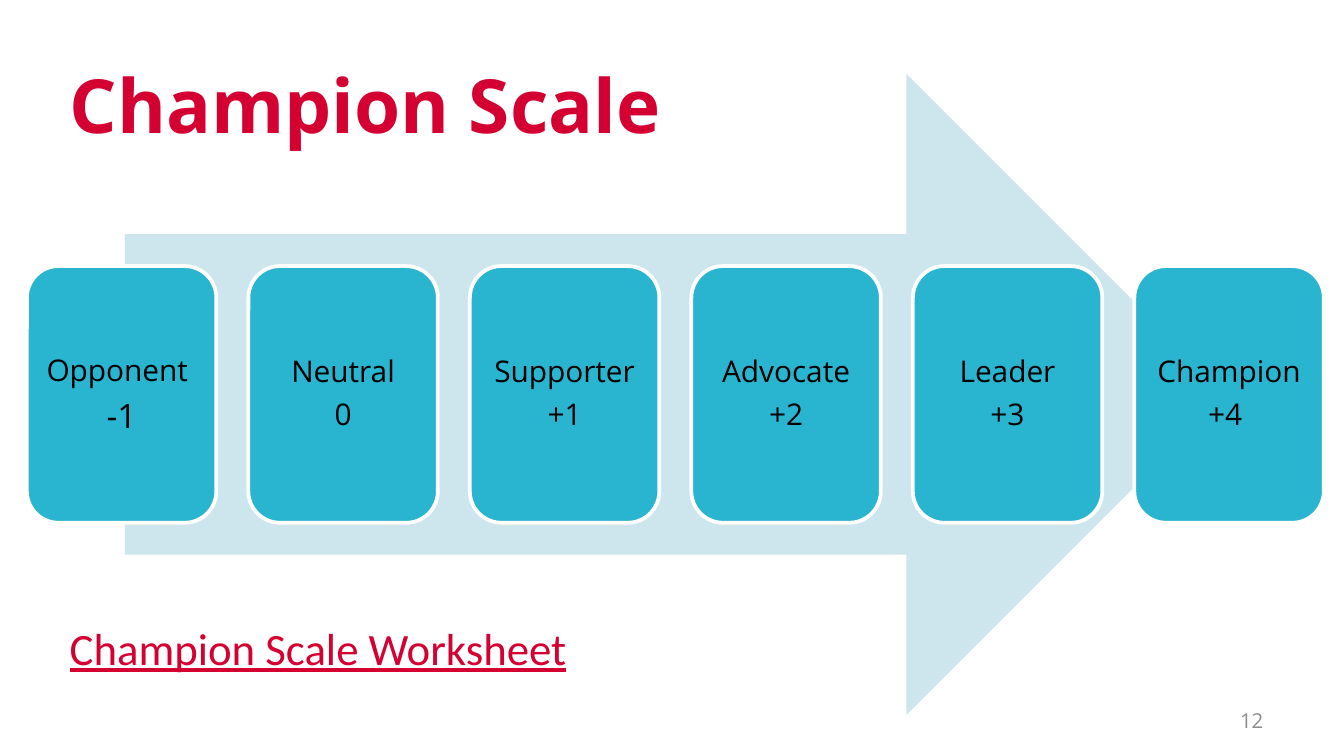
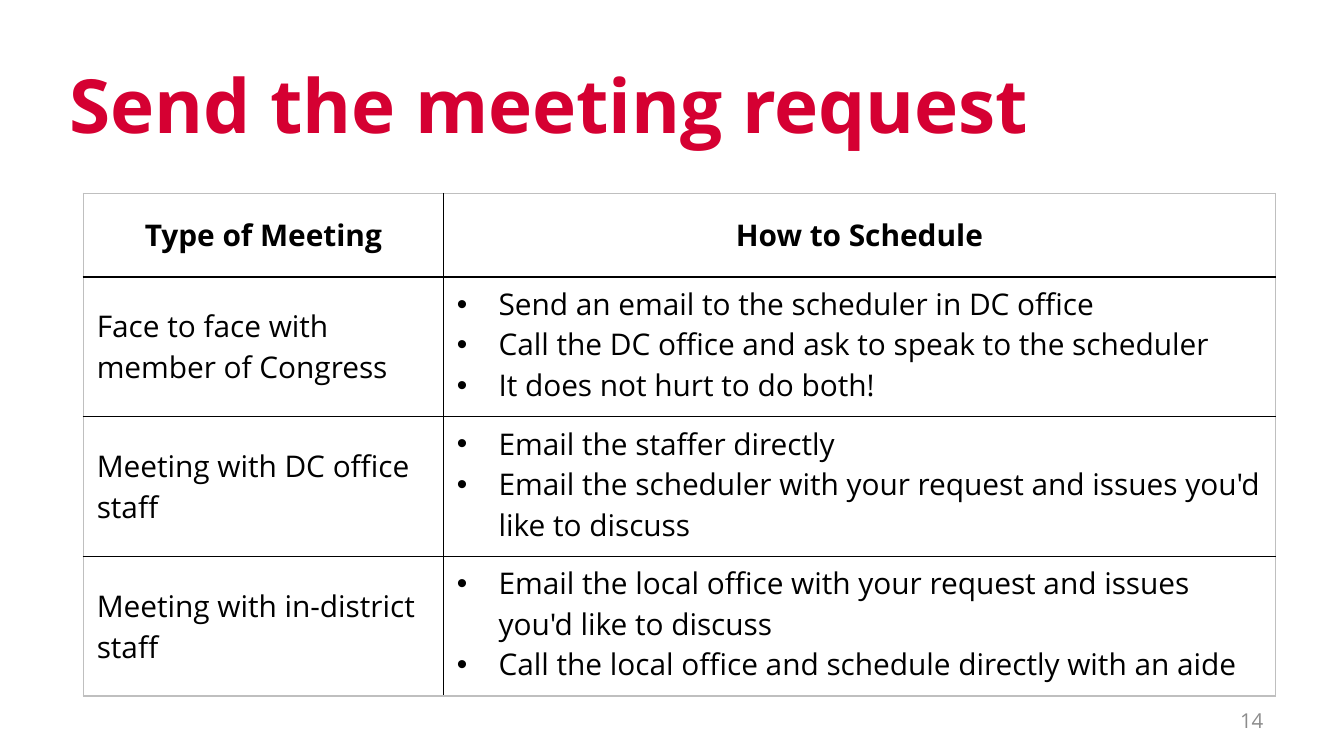
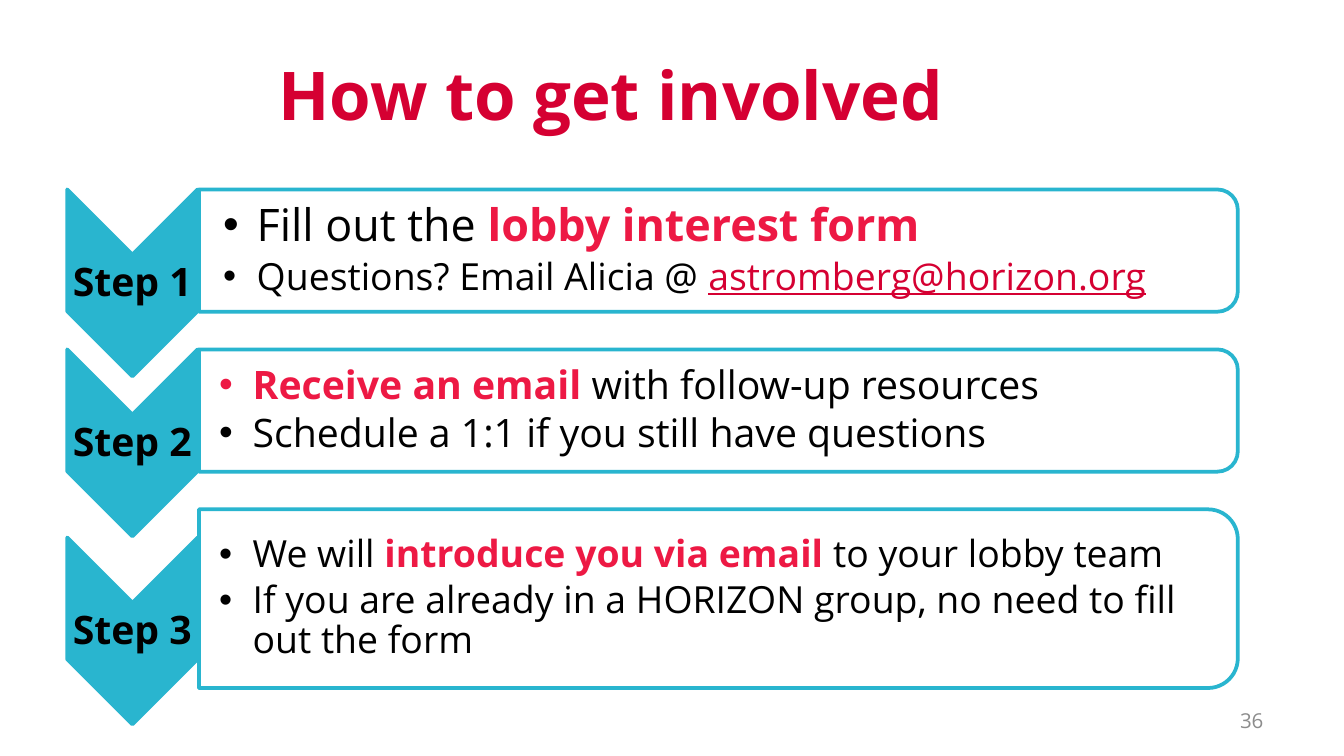
from dataclasses import dataclass
from typing import NamedTuple

from lxml.etree import SubElement
from pptx import Presentation
from pptx.dml.color import RGBColor
from pptx.enum.shapes import MSO_SHAPE
from pptx.enum.text import MSO_ANCHOR, PP_ALIGN
from pptx.oxml import parse_xml
from pptx.oxml.ns import nsdecls, qn
from pptx.util import Emu, Pt

SCALE = 9144
FONT = "Open Sans"
RED, ACCENT = "D50032", "ED1944"
TEAL, PALE = "29B5CF", "CDE5ED"
BLACK, WHITE, GRAY, RULE = "000000", "FFFFFF", "8C8C8C", "BFBFBF"


class Box(NamedTuple):
    left: float
    top: float
    width: int
    height: int


class Span(NamedTuple):
    text: str
    size: float
    color: str = BLACK
    bold: bool = False
    underline: bool = False


@dataclass
class Level:
    name: str
    score: str
    score_size: int = 16


@dataclass
class Step:
    panel_top: int
    panel_height: int
    chevron_top: int
    inset: int
    points: list[list[Span]]


@dataclass
class Meeting:
    kind: str
    actions: list[str]


LEVELS = [
    Level("Opponent", "-1", 18),
    Level("Neutral", "0"),
    Level("Supporter", "+1"),
    Level("Advocate", "+2"),
    Level("Leader", "+3"),
    Level("Champion", "+4 "),
]

MEETINGS = [
    Meeting("Face to face with member of Congress", [
        "Send an email to the scheduler in DC office",
        "Call the DC office and ask to speak to the scheduler",
        "It does not hurt to do both!",
    ]),
    Meeting("Meeting with DC office staff", [
        "Email the staffer directly",
        "Email the scheduler with your request and issues you'd like to discuss",
    ]),
    Meeting("Meeting with in-district staff", [
        "Email the local office with your request and issues you'd like to discuss",
        "Call the local office and schedule directly with an aide",
    ]),
]

STEPS = [
    Step(141, 91, 141, 19, [
        [Span("Fill out the ", 24), Span("lobby interest form", 24, ACCENT, True)],
        [Span("Questions? Email Alicia @ ", 20),
         Span("astromberg@horizon.org", 20, RED, underline=True)],
    ]),
    Step(260, 91, 260, 16, [
        [Span("Receive an email ", 21, ACCENT, True), Span("with follow-up resources", 21)],
        [Span("Schedule a 1:1 if you still have questions", 21)],
    ]),
    Step(379, 133, 400, 16, [
        [Span("We will ", 20), Span("introduce you via email ", 20, ACCENT, True),
         Span("to your lobby team", 20)],
        [Span("If you are already in a HORIZON group, no need to fill out the form", 20)],
    ]),
]


def px(n: float) -> Emu:
    return Emu(round(n * SCALE))


def rgb(value: str) -> RGBColor:
    return RGBColor.from_string(value)


def add_text(p, text: str, *, size: float, color: str = BLACK, bold: bool = False,
             underline: bool = False, font: str = FONT) -> None:
    r = p.add_run()
    r.text = text
    r.font.name = font
    r.font.size = Pt(size)
    r.font.bold = bold
    r.font.underline = underline
    r.font.color.rgb = rgb(color)


def add_paragraph(tf, *, align=PP_ALIGN.LEFT, spacing: float | None = None,
                  after: float = 0, bullet_indent: int = 0):
    first = tf.paragraphs[0]
    p = tf.add_paragraph() if first.runs else first
    p.alignment = align
    if bullet_indent:
        pPr = p._p.get_or_add_pPr()
        pPr.set("marL", str(px(bullet_indent)))
        pPr.set("indent", str(-px(bullet_indent)))
        SubElement(pPr, qn("a:buFont"), typeface="Arial")
        SubElement(pPr, qn("a:buChar"), char="•")
    if spacing:
        p.line_spacing = spacing
    if after:
        p.space_after = Pt(after)
    return p


def add_box(s, box: Box, *, anchor=MSO_ANCHOR.MIDDLE, insets=(10, 5, 10, 5)):
    tf = s.shapes.add_textbox(*map(px, box)).text_frame
    tf.word_wrap = True
    tf.vertical_anchor = anchor
    tf.margin_left, tf.margin_top, tf.margin_right, tf.margin_bottom = map(px, insets)
    return tf


def add_shape(s, kind, box: Box, fill: str, line: str | None = None):
    sp = s.shapes.add_shape(kind, *map(px, box))
    sp.shadow.inherit = False
    sp.fill.solid()
    sp.fill.fore_color.rgb = rgb(fill)
    if line:
        sp.line.color.rgb = rgb(line)
        sp.line.width = Pt(2)
    else:
        sp.line.fill.background()
    return sp


def add_turned(s, kind, box: Box, fill: str, line: str):
    shift = (box.width - box.height) / 2
    frame = Box(box.left + shift, box.top - shift, box.height, box.width)
    sp = add_shape(s, kind, frame, fill, line)
    sp.rotation = 90
    return sp


def add_slide(prs, title: str, number: int, *, box=Box(42, 30, 870, 94),
              size: int = 40, align=PP_ALIGN.LEFT):
    s = prs.slides.add_slide(prs.slide_layouts[6])
    add_text(add_paragraph(add_box(s, box), align=align), title,
             size=size, color=RED, bold=True)
    tf = add_box(s, Box(717, 521, 233, 30))
    add_text(add_paragraph(tf, align=PP_ALIGN.RIGHT), str(number), size=11, color=GRAY)
    return s


def add_level(s, level: Level, left: float) -> None:
    add_shape(s, MSO_SHAPE.ROUNDED_RECTANGLE, Box(left, 198, 141, 191), TEAL, WHITE)
    tf = add_box(s, Box(left + 7, 205, 127, 177), insets=(7, 7, 7, 7))
    for text, size in ((level.name, 16), (level.score, level.score_size)):
        p = add_paragraph(tf, align=PP_ALIGN.CENTER, spacing=0.9, after=0.35 * size)
        add_text(p, text, size=size)
        if text == level.name and level.score_size != size:
            add_text(p, " ", size=level.score_size)


def champion_scale(prs) -> None:
    s = add_slide(prs, "Champion Scale", 12)
    add_shape(s, MSO_SHAPE.RIGHT_ARROW, Box(93, 55, 820, 477), PALE)
    for i, level in enumerate(LEVELS):
        add_level(s, level, 20 + i * 164.8)
    tf = add_box(s, Box(42, 457, 435, 50), anchor=MSO_ANCHOR.TOP)
    add_text(add_paragraph(tf), "Champion Scale Worksheet", size=24, color=RED,
             underline=True, font="Calibri")


def style_cell(cell, edges: dict[str, str], anchor) -> None:
    cell.fill.solid()
    cell.fill.fore_color.rgb = rgb(WHITE)
    cell.vertical_anchor = anchor
    tcPr = cell._tc.get_or_add_tcPr()
    for i, (side, color) in enumerate(edges.items()):
        tcPr.insert(i, parse_xml(
            f'<a:ln{side} {nsdecls("a")} w="{Pt(1)}"><a:solidFill>'
            f'<a:srgbClr val="{color}"/></a:solidFill></a:ln{side}>'))


def meeting_request(prs) -> None:
    s = add_slide(prs, "Send the meeting request", 14)
    last = len(MEETINGS)
    tbl = s.shapes.add_table(last + 1, 2, *map(px, Box(62, 144, 887, 374))).table
    tbl.first_row = tbl.horz_banding = False
    for col, width in zip(tbl.columns, (268, 619)):
        col.width = px(width)
    for i, row in enumerate(tbl.rows):
        row.height = px(104 if i else 62)
        for j, cell in enumerate(row.cells):
            outer = {"L": j == 0, "R": j == 1, "T": i == 0, "B": i == last}
            edges = {side: RULE if out else BLACK for side, out in outer.items()}
            top = i > 0 and j == 1
            style_cell(cell, edges, MSO_ANCHOR.TOP if top else MSO_ANCHOR.MIDDLE)
    for j, heading in enumerate(("Type of Meeting", "How to Schedule")):
        p = add_paragraph(tbl.cell(0, j).text_frame, align=PP_ALIGN.CENTER)
        add_text(p, heading, size=16, bold=True)
    for i, meeting in enumerate(MEETINGS, 1):
        add_text(add_paragraph(tbl.cell(i, 0).text_frame), meeting.kind, size=16)
        for action in meeting.actions:
            p = add_paragraph(tbl.cell(i, 1).text_frame, bullet_indent=31)
            add_text(p, action, size=16)


def add_step(s, step: Step, label: str) -> None:
    add_turned(s, MSO_SHAPE.CHEVRON, Box(50, step.chevron_top, 97, 139), TEAL, TEAL)
    tf = add_box(s, Box(50, step.chevron_top + 49, 97, 42), insets=(1, 1, 1, 1))
    p = add_paragraph(tf, align=PP_ALIGN.CENTER, spacing=0.9)
    add_text(p, label, size=21, bold=True)

    panel = Box(148, step.panel_top, 773, step.panel_height)
    sp = add_turned(s, MSO_SHAPE.ROUND_2_SAME_RECTANGLE, panel, WHITE, TEAL)
    color = sp._element.spPr.find(qn("a:solidFill")).find(qn("a:srgbClr"))
    SubElement(color, qn("a:alpha"), val="90000")
    tf = add_box(s, Box(147, panel.top + 5, 768, panel.height - 10),
                 insets=(step.inset, 1, 1, 1))
    for spans in step.points:
        p = add_paragraph(tf, spacing=0.9, after=0.15 * spans[0].size, bullet_indent=25)
        for span in spans:
            add_text(p, **span._asdict())


def get_involved(prs) -> None:
    s = add_slide(prs, "How to get involved", 36, box=Box(50, 23, 809, 94),
                  size=36, align=PP_ALIGN.CENTER)
    for i, step in enumerate(STEPS, 1):
        add_step(s, step, f"Step {i}")


def main() -> None:
    prs = Presentation()
    prs.slide_width = px(1000)
    prs.slide_height = Emu(prs.slide_width * 9 // 16)
    champion_scale(prs)
    meeting_request(prs)
    get_involved(prs)
    prs.save("out.pptx")


if __name__ == "__main__":
    main()
